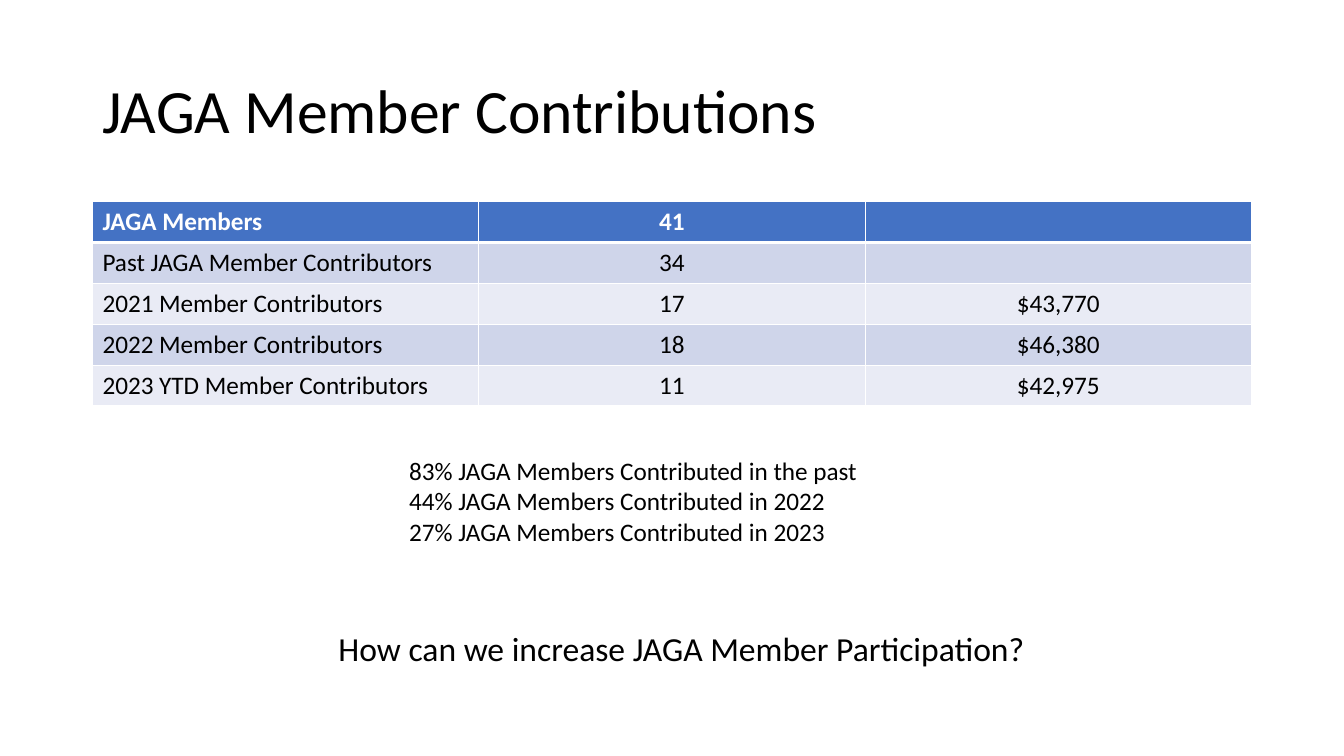
"""Build the JAGA member contributions slide."""
from dataclasses import dataclass

from lxml.etree import SubElement
from pptx import Presentation
from pptx.dml.color import RGBColor
from pptx.enum.text import MSO_ANCHOR as Anchor, PP_ALIGN as Align
from pptx.oxml.ns import qn
from pptx.slide import Slide
from pptx.table import _Cell as Cell
from pptx.text.text import TextFrame
from pptx.util import Cm, Pt

BLACK = RGBColor(0x00, 0x00, 0x00)
WHITE = RGBColor(0xFF, 0xFF, 0xFF)
HEADER_BLUE = RGBColor(0x44, 0x72, 0xC4)
BAND_FILLS = (RGBColor(0xE9, 0xEB, 0xF5), RGBColor(0xCF, 0xD5, 0xEA))
FONT = "Calibri"
TABLE_LEFT, TABLE_TOP, TABLE_WIDTH, ROW_HEIGHT = 2.33, 5.08, 29.21, 1.03
CONTRIBUTIONS = (
    ("JAGA Members", "41", ""),
    ("Past JAGA Member Contributors", "34", ""),
    ("2021 Member Contributors", "17", "$43,770"),
    ("2022 Member Contributors", "18", "$46,380"),
    ("2023 YTD Member Contributors", "11", "$42,975"),
)


@dataclass(frozen=True)
class TextBlock:
    """A text box with its place in centimetres."""

    lines: tuple[str, ...]
    left: float
    top: float
    width: float
    height: float
    size: float = 18
    anchor: Anchor = Anchor.TOP
    spacing: float = 1.0
    wrap: bool = True


TEXT_BLOCKS = (
    TextBlock(("JAGA Member Contributions",), 2.33, 1.01, 29.21, 3.68,
              size=44, anchor=Anchor.MIDDLE, spacing=0.9),
    TextBlock(("83% JAGA Members Contributed in the past",
               "44% JAGA Members Contributed in 2022",
               "27% JAGA Members Contributed in 2023"), 10.06, 11.35, 13.82, 2.57),
    TextBlock(("How can we increase JAGA Member Participation?",),
              8.28, 15.7, 17.98, 1.28, size=24, wrap=False),
)


def write_text(frame: TextFrame, lines: tuple[str, ...], *, size: float = 18,
               color: RGBColor = BLACK, bold: bool = False,
               align: Align = Align.LEFT, spacing: float = 1.0) -> None:
    """Write one paragraph per line in the given format."""
    for index, line in enumerate(lines):
        paragraph = frame.add_paragraph() if index else frame.paragraphs[0]
        paragraph.alignment = align
        paragraph.line_spacing = spacing
        paragraph.font.size = Pt(size)
        run = paragraph.add_run()
        run.text = line
        run.font.name = FONT
        run.font.size = Pt(size)
        run.font.bold = bold
        run.font.color.rgb = color


def add_text_block(slide: Slide, block: TextBlock) -> None:
    """Add a text box to the slide."""
    shape = slide.shapes.add_textbox(Cm(block.left), Cm(block.top),
                                     Cm(block.width), Cm(block.height))
    frame = shape.text_frame
    frame.word_wrap = block.wrap
    frame.vertical_anchor = block.anchor
    write_text(frame, block.lines, size=block.size, spacing=block.spacing)


def set_borders(cell: Cell, top: float, bottom: float) -> None:
    """Give a cell white borders, one point wide at the sides."""
    properties = cell._tc.get_or_add_tcPr()
    for tag, width in (("a:lnL", 1), ("a:lnR", 1), ("a:lnT", top), ("a:lnB", bottom)):
        line = SubElement(properties, qn(tag), w=str(Pt(width)))
        fill = SubElement(line, qn("a:solidFill"))
        SubElement(fill, qn("a:srgbClr"), val=str(WHITE))


def add_contribution_table(slide: Slide) -> None:
    """Add the banded table of contributors and amounts."""
    row_count, column_count = len(CONTRIBUTIONS), len(CONTRIBUTIONS[0])
    table = slide.shapes.add_table(
        row_count, column_count, Cm(TABLE_LEFT), Cm(TABLE_TOP),
        Cm(TABLE_WIDTH), Cm(ROW_HEIGHT * row_count)).table
    for row, values in enumerate(CONTRIBUTIONS):
        header = row == 0
        for column, value in enumerate(values):
            cell = table.cell(row, column)
            set_borders(cell, top=3 if row == 1 else 1, bottom=3 if header else 1)
            cell.fill.solid()
            cell.fill.fore_color.rgb = HEADER_BLUE if header else BAND_FILLS[row % 2]
            if value:
                write_text(cell.text_frame, (value,), bold=header,
                           color=WHITE if header else BLACK,
                           align=Align.CENTER if column else Align.LEFT)


def main() -> None:
    """Create and save the presentation."""
    presentation = Presentation()
    presentation.slide_width, presentation.slide_height = Cm(33.87), Cm(19.05)
    slide = presentation.slides.add_slide(presentation.slide_layouts[6])
    add_contribution_table(slide)
    for block in TEXT_BLOCKS:
        add_text_block(slide, block)
    presentation.save("out.pptx")


if __name__ == "__main__":
    main()
